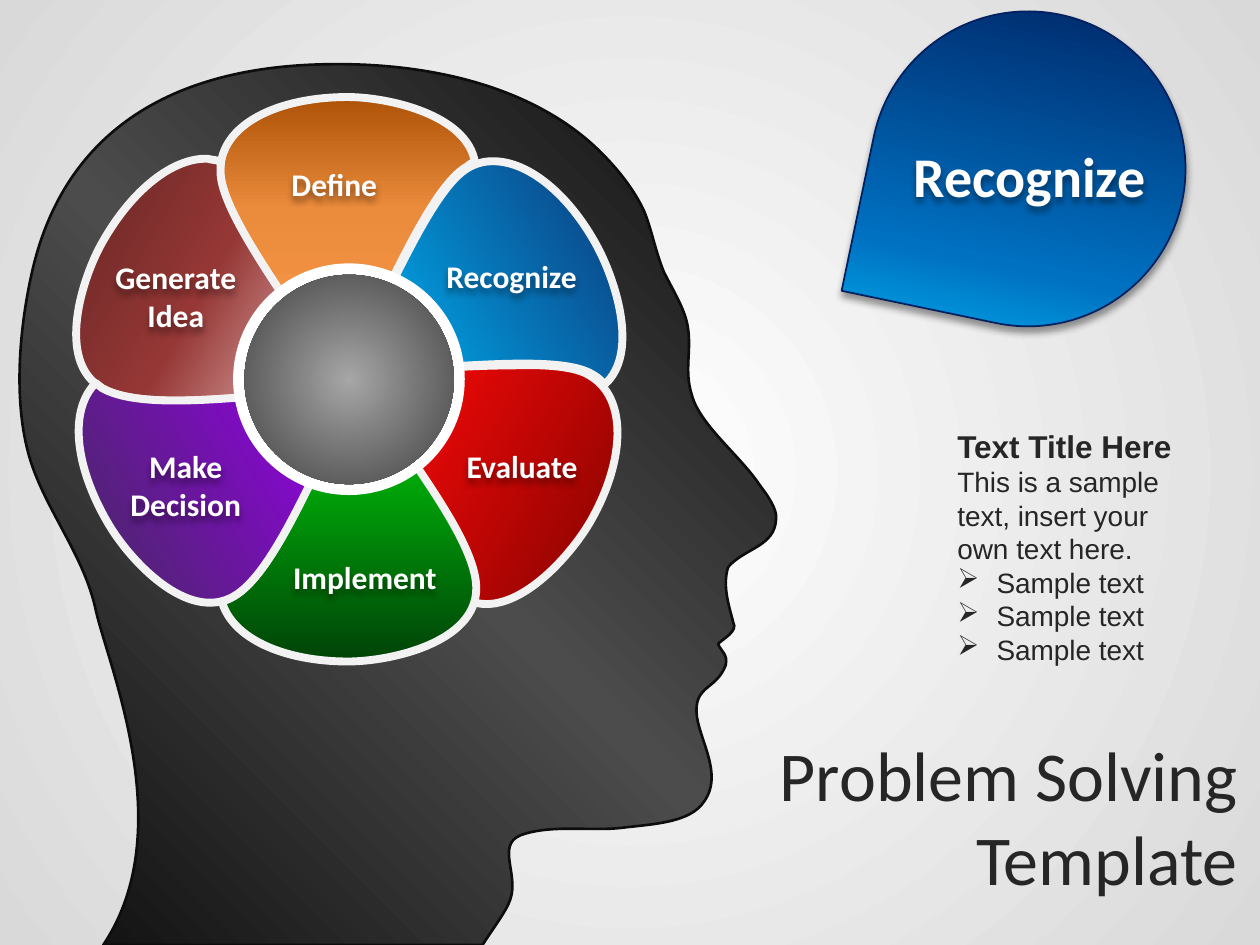
from dataclasses import dataclass
from itertools import islice

from pptx import Presentation
from pptx.dml.color import RGBColor
from pptx.enum.shapes import MSO_SHAPE as Preset
from pptx.enum.text import MSO_ANCHOR as Anchor, MSO_AUTO_SIZE as AutoSize, PP_ALIGN as Align
from pptx.oxml.ns import qn
from pptx.oxml.xmlchemy import OxmlElement as new_element
from pptx.util import Cm, Pt


@dataclass(frozen=True)
class Theme:
    """Colours, gradients, fonts and type sizes of the slide."""

    heading_font: str = "Calibri"
    body_font: str = "Arial"
    ink: str = "262626"
    white: str = "FFFFFF"
    black: str = "000000"
    petal_edge: str = "F2F2F2"
    head_edge: str = "0D0D0D"
    drop_edge: str = "002060"
    title_size: int = 40
    drop_size: int = 32
    label_size: int = 18
    body_size: int = 16
    backdrop: tuple = ((0, "FFFFFF"), (100, "D9D9D9"))
    head: tuple = ((0, "0D0D0D"), (50, "4C4C4C"), (100, "0D0D0D"))
    hub: tuple = ((0, "A6A6A6"), (100, "404040"))
    drop: tuple = ((0, "002060"), (72, "0070C0"), (100, "00B0F0"))
    define: tuple = ((0, "AD5207"), (47, "EB8B3C"), (100, "F79646"))
    recognize: tuple = ((0, "0D3376"), (82, "0299DA"), (100, "00B0F0"))
    evaluate: tuple = ((0, "7E0300"), (79, "E50807"), (100, "FF0000"))
    implement: tuple = ((0, "004308"), (72, "00A109"), (100, "00D00A"))
    decide: tuple = ((0, "3F2C56"), (100, "9600EA"))
    generate: tuple = ((0, "632523"), (54, "953735"), (100, "E6B9B8"))


THEME = Theme()
OUTLINE_UNIT = Cm(2.54) / 100

HEAD = (
    (616, 412), (617, 404, 609, 393, 603, 385), (587, 361, 555, 337, 549, 313),
    (543, 294, 549, 279, 546, 260), (544, 246, 535, 232, 527, 216),
    (520, 199, 517, 181, 511, 167), (502, 148, 488, 132, 477, 121),
    (429, 73, 351, 50, 263, 51), (132, 52, 49, 108, 25, 218),
    (15, 263, 10, 323, 25, 368), (38, 407, 67, 442, 76, 484),
    (86, 529, 143, 659, 82, 750), (383, 750),
    (392, 736, 402, 723, 405, 714), (412, 694, 394, 671, 413, 663),
    (437, 654, 470, 660, 494, 657), (519, 654, 548, 653, 559, 636),
    (576, 612, 550, 581, 553, 560), (555, 544, 569, 546, 576, 528),
    (578, 519, 572, 517, 570, 511), (574, 507, 586, 501, 582, 494),
    (579, 482, 573, 465, 578, 450), (591, 435, 615, 434, 616, 412),
)

PETALS = (
    (THEME.define, 90, (
        (276, 77), (308, 77, 371, 91, 377, 129), (375, 129, 373, 130, 371, 132),
        (347, 145, 319, 206, 292, 261), (296, 268), (247, 268),
        (213, 217, 174, 162, 175, 135), (175, 99, 220, 77, 276, 77))),
    (THEME.recognize, 150, (
        (390, 128), (418, 127, 450, 153, 472, 192), (488, 220, 508, 280, 480, 305),
        (477, 302, 474, 299, 470, 297), (447, 283, 380, 290, 319, 293), (315, 301),
        (293, 262), (320, 207, 348, 146, 372, 133), (377, 130, 384, 128, 390, 128))),
    (THEME.evaluate, 210, (
        (407, 290), (434, 289, 457, 291, 468, 298), (499, 316, 496, 367, 468, 415),
        (452, 442, 411, 488, 376, 478), (376, 475, 377, 472, 377, 469),
        (376, 438, 338, 386, 305, 337), (293, 337), (317, 294),
        (348, 292, 380, 290, 407, 290))),
    (THEME.generate, 30, (
        (165, 126), (168, 127, 172, 127, 175, 128), (175, 131, 175, 133, 175, 135),
        (174, 162, 213, 217, 247, 268), (258, 268), (232, 312),
        (173, 317, 109, 324, 81, 308), (44, 287, 65, 220, 82, 191),
        (105, 151, 137, 125, 165, 126))),
    (THEME.implement, 270, (
        (259, 334), (306, 334), (340, 384, 378, 435, 378, 467),
        (378, 510, 310, 525, 276, 525), (226, 525, 184, 507, 176, 477),
        (179, 477, 183, 475, 186, 473), (213, 457, 239, 398, 265, 345))),
    (THEME.decide, 330, (
        (239, 300), (265, 345), (239, 398, 213, 457, 186, 473),
        (149, 495, 102, 444, 85, 414), (60, 371, 54, 326, 76, 304), (81, 308),
        (109, 324, 173, 317, 232, 312))),
)

LABELS = (
    ("Recognize", (8.74, 5.05, 3.15, 1.02)),
    ("Evaluate", (9.14, 8.89, 2.77, 1.02)),
    ("Implement", (5.64, 11.13, 3.43, 1.02)),
    ("Make\nDecision", (2.36, 8.89, 2.77, 1.8)),
    ("Generate\nIdea", (2.06, 5.08, 2.97, 1.8)),
    ("Define", (5.61, 3.2, 2.26, 1.02)),
)


def add_child(parent, tag, **attributes):
    """Append an XML element with the given attributes."""
    child = new_element(tag)
    for name, value in attributes.items():
        child.set(name, str(value))
    parent.append(child)
    return child


def paint_gradient(fill, owner, stops, angle=None):
    """Fill with a linear gradient, or a circular one if no angle is given."""
    fill.gradient()
    gradient = next(owner.iter(qn("a:gradFill")))
    for child in list(gradient):
        gradient.remove(child)
    stop_list = add_child(gradient, "a:gsLst")
    for position, colour in stops:
        stop = add_child(stop_list, "a:gs", pos=position * 1000)
        add_child(stop, "a:srgbClr", val=colour)
    if angle is None:
        circle = add_child(gradient, "a:path", path="circle")
        add_child(circle, "a:fillToRect", l=50000, t=50000, r=50000, b=50000)
    else:
        add_child(gradient, "a:lin", ang=angle * 60000, scaled=0)


def set_line(shape, colour, width):
    """Give a shape a solid line."""
    shape.line.color.rgb = RGBColor.from_string(colour)
    shape.line.width = Pt(width)


def add_shadow(shape):
    """Give a shape a soft shadow straight below it."""
    shape.shadow.inherit = False
    effects = shape._element.spPr.find(qn("a:effectLst"))
    shadow = add_child(effects, "a:outerShdw", blurRad=Pt(4), dist=Pt(3),
                       dir=90 * 60000, algn="ctr", rotWithShape=0)
    colour = add_child(shadow, "a:srgbClr", val=THEME.black)
    add_child(colour, "a:alpha", val=40000)


def add_outline(shapes, outline, stops, angle, edge, width):
    """Draw a closed outline of straight and cubic segments."""
    start, *segments = outline
    points = [point for segment in segments for point in zip(segment[::2], segment[1::2])]
    builder = shapes.build_freeform(*start, scale=OUTLINE_UNIT)
    shape = builder.add_line_segments(points, close=True).convert_to_shape()
    steps = iter(list(shape._element.iter(qn("a:lnTo"))))
    for segment in segments:
        group = list(islice(steps, len(segment) // 2))
        if len(group) == 3:
            curve = new_element("a:cubicBezTo")
            group[0].addprevious(curve)
            for step in group:
                curve.append(step[0])
                step.getparent().remove(step)
    shape.shadow.inherit = False
    paint_gradient(shape.fill, shape._element, stops, angle)
    set_line(shape, edge, width)


def add_disc(shapes, left, top, size):
    """Add a circle without line or shadow."""
    disc = shapes.add_shape(Preset.OVAL, Cm(left), Cm(top), Cm(size), Cm(size))
    disc.shadow.inherit = False
    disc.line.fill.background()
    return disc


def add_wheel(slide):
    """Add the six petals and their hub as one group."""
    shapes = slide.shapes.add_group_shape().shapes
    for stops, angle, outline in PETALS:
        add_outline(shapes, outline, stops, angle, THEME.petal_edge, 4.5)
    ring = add_disc(shapes, 4.7, 5.31, 4.67)
    ring.fill.solid()
    ring.fill.fore_color.rgb = RGBColor.from_string(THEME.white)
    hub = add_disc(shapes, 4.93, 5.54, 4.22)
    paint_gradient(hub.fill, hub._element, THEME.hub)


def add_drop(slide):
    """Add the large teardrop that points to the wheel."""
    drop = slide.shapes.add_shape(Preset.TEAR, Cm(17.55), Cm(0.23), Cm(6.35), Cm(6.35))
    drop.rotation = 11.8
    for flip in ("flipH", "flipV"):
        drop._element.spPr.xfrm.set(flip, "1")
    paint_gradient(drop.fill, drop._element, THEME.drop, 270)
    set_line(drop, THEME.drop_edge, 1)
    add_shadow(drop)


def format_paragraph(paragraph, font, size, colour, bold=False, align=Align.LEFT):
    """Set alignment and the type of every run."""
    paragraph.alignment = align
    for run in paragraph.runs:
        run.font.name = font
        run.font.size = Pt(size)
        run.font.bold = bold
        run.font.color.rgb = RGBColor.from_string(colour)


def add_text(slide, text, box, wrap=True):
    """Add a text box and return it."""
    shape = slide.shapes.add_textbox(*map(Cm, box))
    shape.text_frame.text = text
    shape.text_frame.word_wrap = wrap
    return shape


def add_label(slide, text, box, size):
    """Add a bold white centred label with a shadow."""
    label = add_text(slide, text, box, wrap=False)
    label.text_frame.auto_size = AutoSize.SHAPE_TO_FIT_TEXT
    for paragraph in label.text_frame.paragraphs:
        format_paragraph(paragraph, THEME.heading_font, size, THEME.white, True, Align.CENTER)
    add_shadow(label)


def add_title(slide):
    """Add the slide title."""
    title = add_text(slide, "Problem Solving Template", (14.4, 14.61, 10.8, 3.68))
    title.text_frame.vertical_anchor = Anchor.MIDDLE
    format_paragraph(title.text_frame.paragraphs[0], THEME.heading_font,
                     THEME.title_size, THEME.ink, align=Align.RIGHT)


def add_body(slide):
    """Add the heading, sample text and bullets."""
    lines = ["Text Title Here", "This is a sample text, insert your own text here."]
    lines += ["Sample text"] * 3
    body = add_text(slide, "\n".join(lines), (19.05, 8.48, 5.28, 5.13))
    body.text_frame.auto_size = AutoSize.SHAPE_TO_FIT_TEXT
    heading, *others = body.text_frame.paragraphs
    format_paragraph(heading, THEME.body_font, THEME.label_size, THEME.ink, True)
    for paragraph in others:
        format_paragraph(paragraph, THEME.body_font, THEME.body_size, THEME.ink)
    for paragraph in others[1:]:
        properties = paragraph._p.get_or_add_pPr()
        properties.set("marL", str(Cm(0.79)))
        properties.set("indent", str(-Cm(0.79)))
        add_child(properties, "a:buChar", char="➢")


def main():
    """Build and save the slide."""
    presentation = Presentation()
    presentation.slide_width, presentation.slide_height = Cm(25.4), Cm(19.05)
    slide = presentation.slides.add_slide(presentation.slide_layouts[6])
    paint_gradient(slide.background.fill, slide._element, THEME.backdrop)
    add_outline(slide.shapes, HEAD, THEME.head, 315, THEME.head_edge, 1.5)
    add_title(slide)
    add_wheel(slide)
    for text, box in LABELS:
        add_label(slide, text, box, THEME.label_size)
    add_body(slide)
    add_drop(slide)
    add_label(slide, "Recognize", (18.14, 2.72, 5.23, 1.63), THEME.drop_size)
    presentation.save("out.pptx")


if __name__ == "__main__":
    main()
